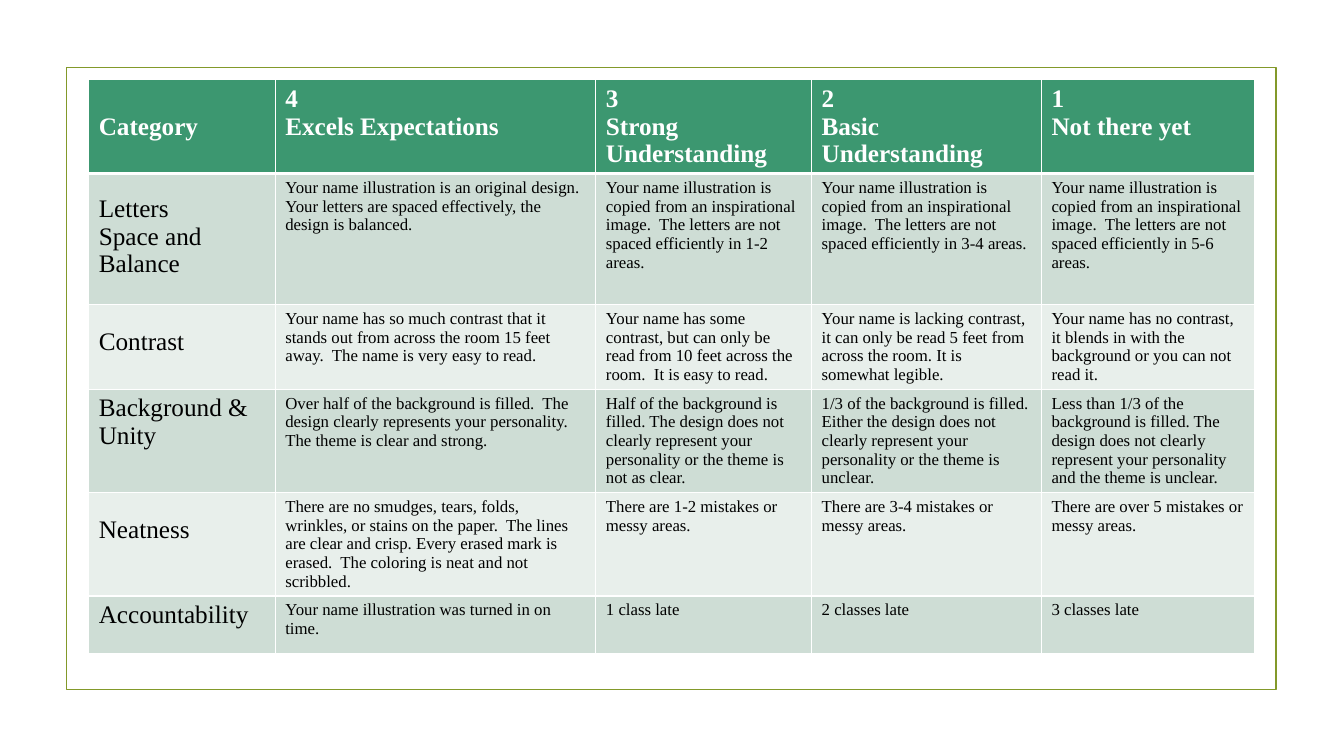
from lxml import etree
from pptx import Presentation, util as u
from pptx.dml.color import RGBColor
from pptx.enum import shapes
from pptx.oxml import ns

COLORS = {"frame": "83992A", "header": "3C9770", "odd": "CEDDD5",
          "even": "E8EFEB", "white": "FFFFFF", "black": "000000"}
COL_WIDTHS = [1.85, 3.18, 2.14, 2.28, 2.11]
ROW_HEIGHTS = [0.93, 1.3, 0.84, 1.02, 0.84, 0.57]
LABEL_DROPS = [0.28, 0.16, 0.18, 0, 0.18, 0]

RUBRIC = [
    ["Category", "4\nExcels Expectations", "3\nStrong Understanding",
     "2\nBasic Understanding", "1\nNot there yet"],
    ["Letters\nSpace and\nBalance",
     "Your name illustration is an original design. Your letters are spaced effectively, "
     "the design is balanced.",
     *[f"Your name illustration is copied from an inspirational image.  The letters are not "
       f"spaced efficiently in {areas} areas." for areas in ("1-2", "3-4", "5-6")]],
    ["Contrast",
     "Your name has so much contrast that it stands out from across the room 15 feet away.  "
     "The name is very easy to read.",
     "Your name has some contrast, but can only be read from 10 feet across the room.  "
     "It is easy to read.",
     "Your name is lacking contrast, it can only be read 5 feet from across the room. "
     "It is somewhat legible.",
     "Your name has no contrast, it blends in with the background or you can not read it."],
    ["Background &\nUnity",
     "Over half of the background is filled.  The design clearly represents your personality.\n"
     "The theme is clear and strong.",
     "Half of the background is filled. The design does not clearly represent your personality "
     "or the theme is not as clear.",
     "1/3 of the background is filled. Either the design does not clearly represent your "
     "personality or the theme is unclear.",
     "Less than 1/3 of the background is filled. The design does not clearly represent your "
     "personality and the theme is unclear."],
    ["Neatness",
     "There are no smudges, tears, folds, wrinkles, or stains on the paper.  The lines are clear "
     "and crisp. Every erased mark is erased.  The coloring is neat and not scribbled.",
     *[f"There are {count} mistakes or messy areas." for count in ("1-2", "3-4", "over 5")]],
    ["Accountability", "Your name illustration was turned in on time.",
     "1 class late", "2 classes late", "3 classes late"],
]


class SlideBuilder:
    font = "Times New Roman"

    def __init__(self, prs):
        self.s = prs.slides.add_slide(prs.slide_layouts[6])

    def rgb(self, name):
        return RGBColor.from_string(COLORS[name])

    def frame(self, x, y, w, h):
        sp = self.s.shapes.add_shape(shapes.MSO_SHAPE.RECTANGLE,
                                     *map(u.Inches, (x, y, w, h)))
        sp.shadow.inherit = False
        sp.fill.background()
        sp.line.color.rgb = self.rgb("frame")
        sp.line.width = u.Pt(1.25)

    def borders(self, cell, top, bottom):
        tc_pr = cell._tc.get_or_add_tcPr()
        for side, width in (("L", 1), ("R", 1), ("T", top), ("B", bottom)):
            ln = etree.SubElement(tc_pr, ns.qn(f"a:ln{side}"), w=str(u.Pt(width)))
            fill = etree.SubElement(ln, ns.qn("a:solidFill"))
            etree.SubElement(fill, ns.qn("a:srgbClr"), val=COLORS["white"])

    def cell_text(self, cell, words, size, color, bold):
        tf = cell.text_frame
        for i, line in enumerate(words.split("\n")):
            p = tf.add_paragraph() if i else tf.paragraphs[0]
            r = p.add_run()
            r.text = line
            r.font.name = self.font
            r.font.size = u.Pt(size)
            r.font.bold = bold
            r.font.color.rgb = self.rgb(color)

    def rubric(self, x, y, rows):
        table = self.s.shapes.add_table(
            len(rows), len(COL_WIDTHS), u.Inches(x), u.Inches(y),
            u.Inches(sum(COL_WIDTHS)), u.Inches(sum(ROW_HEIGHTS))).table
        for col, width in zip(table.columns, COL_WIDTHS):
            col.width = u.Inches(width)
        for i, row in enumerate(rows):
            table.rows[i].height = u.Inches(ROW_HEIGHTS[i])
            head = i == 0
            band = "header" if head else ("even", "odd")[i % 2]
            for j, words in enumerate(row):
                cell = table.cell(i, j)
                self.borders(cell, 3 if i == 1 else 1, 3 if head else 1)
                cell.fill.solid()
                cell.fill.fore_color.rgb = self.rgb(band)
                cell.margin_top = u.Inches(0.05 + (0 if j else LABEL_DROPS[i]))
                self.cell_text(cell, words, 18 if head or j == 0 else 12,
                               "white" if head else "black", head)


def main():
    prs = Presentation()
    prs.slide_width, prs.slide_height = u.Inches(13.33), u.Inches(7.5)
    slide = SlideBuilder(prs)
    slide.frame(0.66, 0.67, 12, 6.17)
    slide.rubric(0.88, 0.79, RUBRIC)
    prs.save("out.pptx")


if __name__ == "__main__":
    main()
